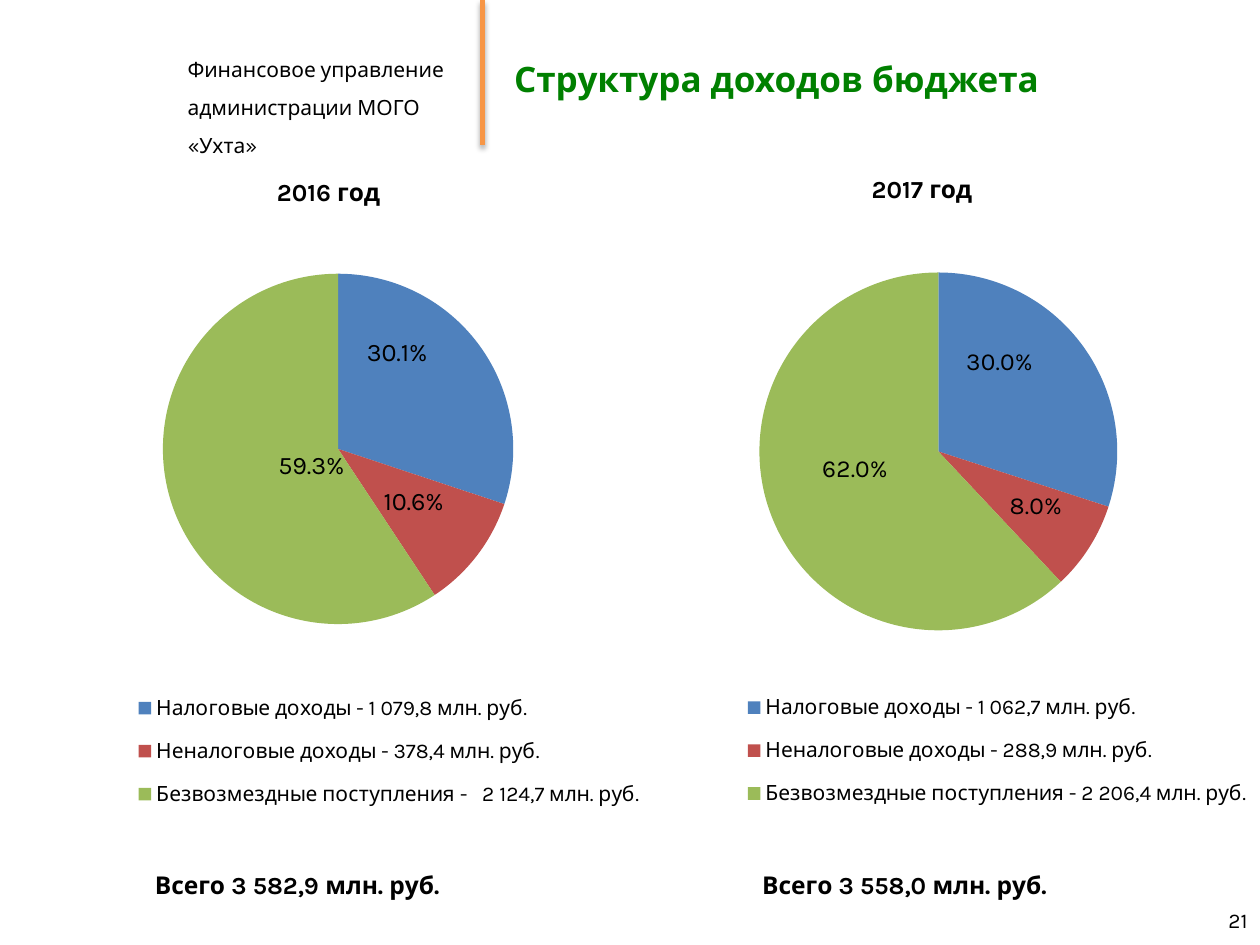
from lxml.etree import SubElement
from pptx import Presentation
from pptx.chart.data import CategoryChartData
from pptx.dml.color import RGBColor
from pptx.enum.chart import XL_CHART_TYPE, XL_LABEL_POSITION, XL_LEGEND_POSITION
from pptx.enum.shapes import MSO_CONNECTOR
from pptx.enum.text import MSO_ANCHOR, MSO_AUTO_SIZE, PP_ALIGN
from pptx.oxml import parse_xml
from pptx.oxml.ns import nsdecls, qn
from pptx.util import Inches, Pt

FONT = "Karla"
BLACK = RGBColor(0x00, 0x00, 0x00)
GREEN = RGBColor(0x00, 0x80, 0x00)
ORANGE = RGBColor(0xF7, 0x96, 0x46)
SLICE_COLORS = (
    RGBColor(0x4F, 0x81, 0xBD),
    RGBColor(0xC0, 0x50, 0x4D),
    RGBColor(0x9B, 0xBB, 0x59),
)

# Boxes are left, top, width, height in inches; plot and legend areas are
# fractions of the chart, label shifts are fractions from the slice centre.
YEARS = (
    {
        "heading": ("2016 год", (2.1, 1.36, 1.1, 0.34)),
        "total": ("Всего 3 582,9 млн. руб.", (1.13, 6.86, 2.65, 0.34)),
        "income": (
            ("Налоговые доходы - 1 079,8 млн. руб.", 30.1),
            ("Неналоговые доходы - 378,4 млн. руб.", 10.6),
            ("Безвозмездные поступления -   2 124,7 млн. руб.", 59.3),
        ),
        "box": (0.37, 1.24, 4.77, 5.83),
        "plot": (0.04, 0.16, 0.89, 0.477),
        "legend": (0.14, 0.71, 0.86, 0.2),
        "label_shifts": ((-0.02, -0.06), (0.01, 0), (0.095, -0.01)),
        "label_size": 14.4,
    },
    {
        "heading": ("2017 год", (6.82, 1.33, 1.1, 0.34)),
        "total": ("Всего 3 558,0 млн. руб.", (5.95, 6.86, 2.58, 0.34)),
        "income": (
            ("Налоговые доходы - 1 062,7 млн. руб.", 30),
            ("Неналоговые доходы - 288,9 млн. руб.", 8),
            ("Безвозмездные поступления - 2 206,4 млн. руб.", 62),
        ),
        "box": (5.61, 1.36, 4.39, 5.82),
        "plot": (0.01, 0.138, 0.817, 0.488),
        "legend": (0.05, 0.69, 0.95, 0.2),
        "label_shifts": ((-0.02, -0.05), (0.04, 0.01), (0, -0.02)),
        "label_size": 14,
    },
)


def inches(box):
    return [Inches(length) for length in box]


def set_font(font, size, color=BLACK, bold=False):
    font.name = FONT
    font.size = Pt(size)
    font.bold = bold
    font.color.rgb = color


def fill_text(frame, text, size, color=BLACK, bold=False, align=PP_ALIGN.LEFT,
              spacing=None, anchor=MSO_ANCHOR.TOP):
    frame.word_wrap = True
    frame.auto_size = MSO_AUTO_SIZE.NONE
    frame.vertical_anchor = anchor
    frame.text = text
    for paragraph in frame.paragraphs:
        paragraph.alignment = align
        paragraph.line_spacing = spacing
        for run in paragraph.runs:
            set_font(run.font, size, color, bold)


def add_label(slide, text, box, size, **style):
    label = slide.shapes.add_textbox(*inches(box))
    fill_text(label.text_frame, text, size, **style)


def add_title(slide, text):
    title = slide.shapes.title
    title.left, title.top, title.width, title.height = inches((3.98, 0, 4.88, 1.01))
    fill_text(title.text_frame, text, 20, color=GREEN, bold=True, spacing=1.7,
              anchor=MSO_ANCHOR.MIDDLE)


def add_divider(slide):
    divider = slide.shapes.add_connector(
        MSO_CONNECTOR.STRAIGHT, *inches((3.83, 0, 3.83, 1.15)))
    divider.line.color.rgb = ORANGE
    divider.line.width = Pt(3)
    divider._element.spPr.append(parse_xml(
        f'<a:effectLst {nsdecls("a")}><a:outerShdw blurRad="{Pt(3.1)}" '
        f'dist="{Pt(1.8)}" dir="5400000" rotWithShape="0"><a:srgbClr val="000000">'
        '<a:alpha val="35000"/></a:srgbClr></a:outerShdw></a:effectLst>'))


def manual_layout(settings):
    layout = parse_xml(f'<c:layout {nsdecls("c")}><c:manualLayout/></c:layout>')
    for name, value in settings.items():
        SubElement(layout[0], qn(f"c:{name}"), val=str(value))
    return layout


def area_layout(area, **target):
    """Fix a chart part to an area given in fractions of the chart."""
    return manual_layout({**target, "xMode": "edge", "yMode": "edge",
                          **dict(zip("xywh", area))})


def add_slice_labels(plot, year):
    plot.has_data_labels = True
    labels = plot.data_labels
    labels.show_percentage = True
    labels.show_value = False
    labels.number_format = "0.0%"
    labels.number_format_is_linked = False
    labels.position = XL_LABEL_POSITION.CENTER
    set_font(labels.font, year["label_size"])
    for index, (x, y) in reversed(list(enumerate(year["label_shifts"]))):
        slice_label = parse_xml(
            f'<c:dLbl {nsdecls("c")}><c:idx val="{index}"/><c:dLblPos val="ctr"/>'
            '<c:showLegendKey val="0"/><c:showVal val="0"/><c:showCatName val="0"/>'
            '<c:showSerName val="0"/><c:showPercent val="1"/>'
            '<c:showBubbleSize val="0"/></c:dLbl>')
        slice_label.insert(1, manual_layout({"x": x, "y": y}))
        labels._element.insert(0, slice_label)
    # Shifted labels only count when they belong to the series.
    series = plot.series[0]._element
    series.find(qn("c:cat")).addprevious(labels._element)


def add_income_pie(slide, year):
    names, shares = zip(*year["income"])
    data = CategoryChartData(number_format="General")
    data.categories = names
    data.add_series("Series 1", shares)
    chart = slide.shapes.add_chart(
        XL_CHART_TYPE.PIE, *inches(year["box"]), data).chart
    chart.has_title = False
    set_font(chart.font, 18)

    plot = chart.plots[0]
    plot.vary_by_categories = True
    for index, color in enumerate(SLICE_COLORS):
        fill = plot.series[0].points[index].format.fill
        fill.solid()
        fill.fore_color.rgb = color
    add_slice_labels(plot, year)

    plot_area = chart._chartSpace.chart.plotArea
    for layout in plot_area.findall(qn("c:layout")):
        plot_area.remove(layout)
    plot_area.insert(0, area_layout(year["plot"], layoutTarget="inner"))

    chart.has_legend = True
    legend = chart.legend
    legend.position = XL_LEGEND_POSITION.RIGHT
    legend.include_in_layout = False
    set_font(legend.font, 12)
    for layout in legend._element.findall(qn("c:layout")):
        legend._element.remove(layout)
    legend._element.find(qn("c:legendPos")).addnext(area_layout(year["legend"]))


def main():
    prs = Presentation()
    prs.slide_width, prs.slide_height = Inches(10), Inches(7.5)
    slide = prs.slides.add_slide(prs.slide_layouts[5])

    add_label(slide, "Финансовое управление\nадминистрации МОГО «Ухта»",
              (1.39, 0.3, 2.5, 0.66), 12, spacing=1.5)
    add_divider(slide)
    add_title(slide, "Структура доходов бюджета")
    for year in YEARS:
        add_income_pie(slide, year)
        for part in ("heading", "total"):
            text, box = year[part]
            add_label(slide, text, box, 14, bold=True)
    add_label(slide, "21", (7.67, 7.1, 2.33, 0.4), 12, align=PP_ALIGN.RIGHT,
              anchor=MSO_ANCHOR.MIDDLE)

    prs.save("out.pptx")


if __name__ == "__main__":
    main()
